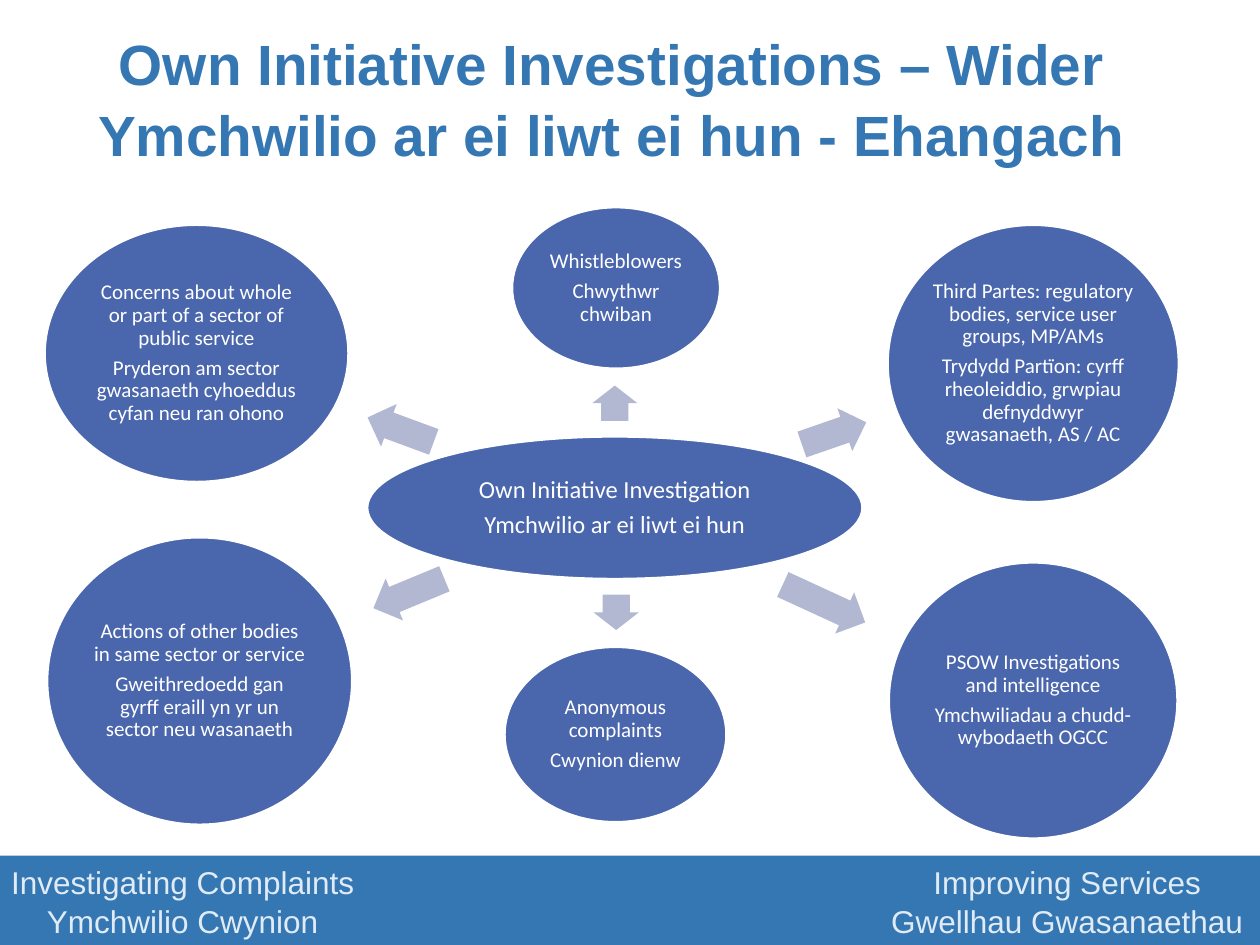
"""Build the bilingual slide on wider own initiative investigations."""
from dataclasses import dataclass

from pptx import Presentation
from pptx.dml.color import RGBColor
from pptx.enum.shapes import MSO_SHAPE
from pptx.enum.text import MSO_ANCHOR, PP_ALIGN
from pptx.shapes.autoshape import Shape
from pptx.slide import Slide
from pptx.util import Emu, Inches, Pt

COLOURS = {
    "banner": "3477B2",
    "bubble": "4A66AC",
    "arrow": "B2B8D2",
    "white": "FFFFFF",
    "motto": "E0EBF6",
}
COLUMNS, ROWS = 100, 75
SLIDE_WIDTH, SLIDE_HEIGHT = Inches(10), Inches(7.5)
ARROW_BREADTH = 3.6


@dataclass(frozen=True)
class Area:
    """A rectangle in grid columns and rows."""
    column: float
    row: float
    width: float
    height: float

    def emu(self) -> tuple[Emu, Emu, Emu, Emu]:
        """Return left, top, width and height on the slide."""
        across, down = SLIDE_WIDTH / COLUMNS, SLIDE_HEIGHT / ROWS
        return (Emu(round(self.column * across)), Emu(round(self.row * down)),
                Emu(round(self.width * across)), Emu(round(self.height * down)))


@dataclass(frozen=True)
class Arrow:
    """An arrow by its left and top before turning, length and angle."""
    column: float
    row: float
    length: float
    angle: float


@dataclass(frozen=True)
class Source:
    """A source of investigations with the arrow that leads to it."""
    area: Area
    english: str
    welsh: str
    arrow: Arrow


@dataclass(frozen=True)
class Motto:
    """One bilingual half of the footer."""
    area: Area
    english: str
    welsh: str


TITLE_AREA = Area(2.1, 2.2, 92.9, 11)
TITLE = ("Own Initiative Investigations – Wider",
         "Ymchwilio ar ei liwt ei hun - Ehangach")
HUB_AREA = Area(29.1, 34.6, 39.4, 11.4)
HUB = ("Own Initiative Investigation", "Ymchwilio ar ei liwt ei hun")
FOOTER_AREA = Area(0, 67.9, 100, 7.1)

SOURCES = (
    Source(Area(40.6, 16.4, 16.6, 12.9), "Whistleblowers", "Chwythwr chwiban",
           Arrow(47.4, 30.2, 2.8, 270)),
    Source(Area(40, 51.3, 17.7, 14), "Anonymous complaints", "Cwynion dienw",
           Arrow(47.5, 46.8, 2.8, 90)),
    Source(Area(70.5, 44.6, 23, 22), "PSOW Investigations and intelligence",
           "Ymchwiliadau a chudd-wybodaeth OGCC",
           Arrow(61.8, 46.1, 7.2, 24.7)),
    Source(Area(70.4, 17.8, 23.2, 22.1),
           "Third Partes: regulatory bodies, service user groups, MP/AMs",
           "Trydydd Partïon: cyrff rheoleiddio, grwpiau defnyddwyr gwasanaeth, AS / AC",
           Arrow(63.5, 32.6, 5.4, 340.9)),
    Source(Area(3.7, 42.6, 24.3, 22.9),
           "Actions of other bodies in same sector or service",
           "Gweithredoedd gan gyrff eraill yn yr un sector neu wasanaeth",
           Arrow(29.4, 45.3, 6.1, 157.5)),
    Source(Area(3.5, 17.8, 24.2, 20.5),
           "Concerns about whole or part of a sector of public service",
           "Pryderon am sector gwasanaeth cyhoeddus cyfan neu ran ohono",
           Arrow(29, 32.3, 5.6, 200.2)),
)
MOTTOS = (
    Motto(Area(0, 67.9, 29, 7.1), "Investigating Complaints", "Ymchwilio Cwynion"),
    Motto(Area(69.6, 67.9, 30.2, 7.1), "Improving Services", "Gwellhau Gwasanaethau"),
)


def write(shape: Shape, lines: tuple[str, ...], *, size: float, colour: str,
          font: str = "Arial", bold: bool = False, spacing: float = 1.04,
          after: float = 0, inset: float = 0) -> None:
    """Write centred paragraphs into a shape."""
    frame = shape.text_frame
    frame.word_wrap = True
    frame.vertical_anchor = MSO_ANCHOR.MIDDLE
    frame.margin_left = frame.margin_right = Inches(inset)
    frame.margin_top = frame.margin_bottom = Inches(inset)
    for index, line in enumerate(lines):
        paragraph = frame.add_paragraph() if index else frame.paragraphs[0]
        paragraph.alignment = PP_ALIGN.CENTER
        paragraph.line_spacing = spacing
        paragraph.space_after = Pt(after)
        run = paragraph.add_run()
        run.text = line
        run.font.name = font
        run.font.size = Pt(size)
        run.font.bold = bold
        run.font.color.rgb = RGBColor.from_string(COLOURS[colour])


def add_filled(slide: Slide, preset: MSO_SHAPE, area: Area, colour: str) -> Shape:
    """Add a flat preset shape without outline."""
    shape = slide.shapes.add_shape(preset, *area.emu())
    shape.shadow.inherit = False
    shape.fill.solid()
    shape.fill.fore_color.rgb = RGBColor.from_string(COLOURS[colour])
    shape.line.fill.background()
    return shape


def add_bubble(slide: Slide, area: Area, lines: tuple[str, ...], size: float) -> None:
    """Add a white-edged ellipse holding its text."""
    bubble = add_filled(slide, MSO_SHAPE.OVAL, area, "bubble")
    bubble.line.color.rgb = RGBColor.from_string(COLOURS["white"])
    bubble.line.width = Pt(2)
    write(bubble, lines, size=size, colour="white", font="Calibri",
          spacing=0.9, after=0.35 * size, inset=0.02)


def add_arrow(slide: Slide, arrow: Arrow) -> None:
    """Add a block arrow turned towards its source."""
    area = Area(arrow.column, arrow.row, arrow.length, ARROW_BREADTH)
    shape = add_filled(slide, MSO_SHAPE.RIGHT_ARROW, area, "arrow")
    shape.adjustments[0] = 0.6
    shape.adjustments[1] = 0.5
    shape.rotation = arrow.angle


def main() -> None:
    """Draw the slide and save it."""
    presentation = Presentation()
    presentation.slide_width, presentation.slide_height = SLIDE_WIDTH, SLIDE_HEIGHT
    slide = presentation.slides.add_slide(presentation.slide_layouts[6])

    add_filled(slide, MSO_SHAPE.RECTANGLE, FOOTER_AREA, "banner")
    for motto in MOTTOS:
        write(slide.shapes.add_textbox(*motto.area.emu()),
              (motto.english, motto.welsh), size=18, colour="motto")
    write(slide.shapes.add_textbox(*TITLE_AREA.emu()), TITLE,
          size=32.4, colour="banner", bold=True)

    add_bubble(slide, HUB_AREA, HUB, 14)
    for source in SOURCES:
        add_arrow(slide, source.arrow)
        add_bubble(slide, source.area, (source.english, source.welsh), 12)
    presentation.save("out.pptx")


if __name__ == "__main__":
    main()
